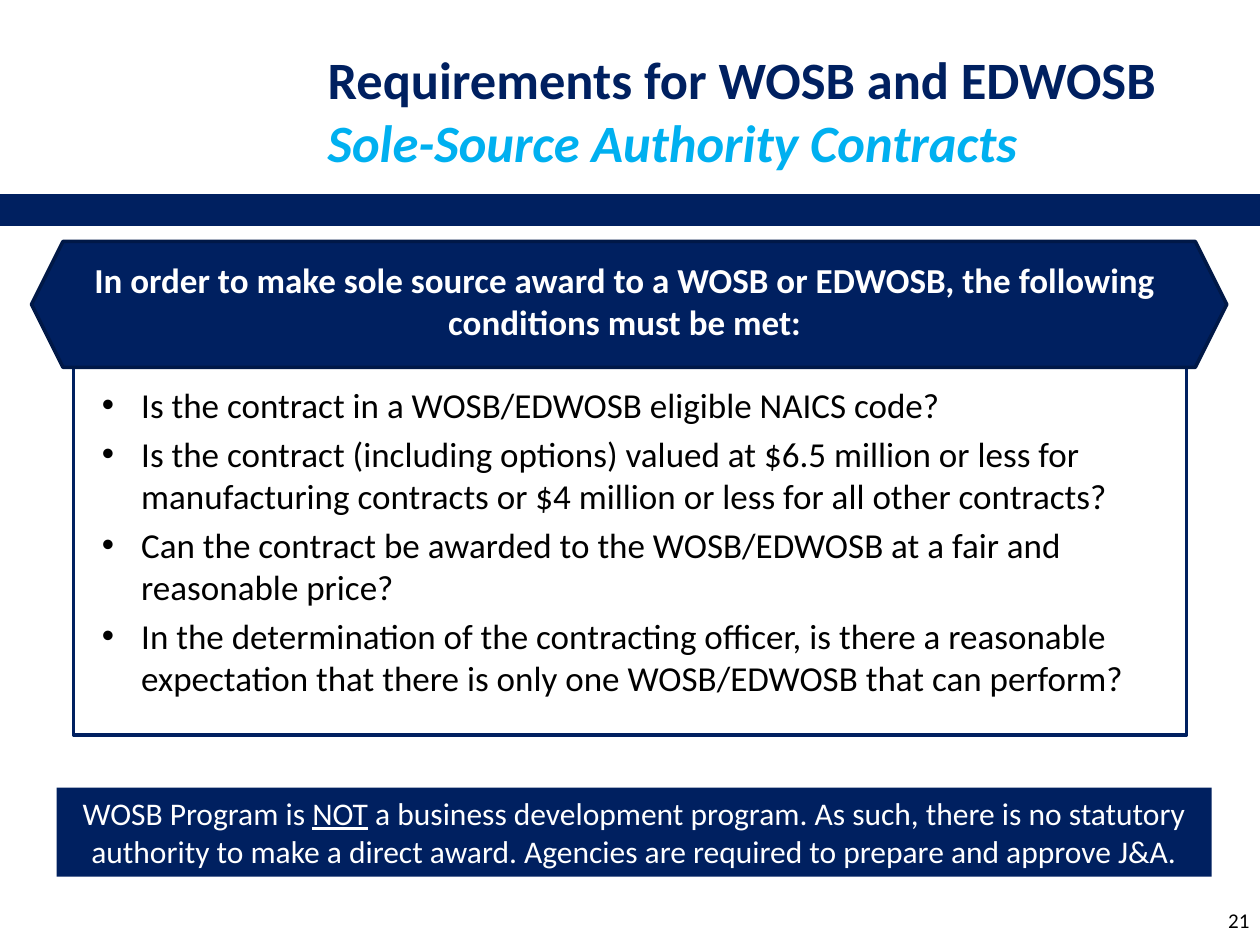
"""Build the slide on sole-source requirements for WOSB and EDWOSB contracts."""
from dataclasses import dataclass
from typing import Optional

from lxml.etree import SubElement
from pptx import Presentation
from pptx.dml.color import RGBColor
from pptx.enum.shapes import MSO_CONNECTOR, MSO_SHAPE
from pptx.enum.text import MSO_ANCHOR, MSO_AUTO_SIZE, PP_ALIGN
from pptx.oxml.ns import qn
from pptx.util import Pt

NAVY = RGBColor(0x00, 0x20, 0x60)
DARK_NAVY = RGBColor(0x00, 0x18, 0x47)
SKY = RGBColor(0x00, 0xB0, 0xF0)
WHITE = RGBColor(0xFF, 0xFF, 0xFF)
BLACK = RGBColor(0x00, 0x00, 0x00)
FONT = "Calibri"

CONDITIONS = (
    "Is the contract in a WOSB/EDWOSB eligible NAICS code?",
    "Is the contract (including options) valued at $6.5 million or less for "
    "manufacturing contracts or $4 million or less for all other contracts?",
    "Can the contract be awarded to the WOSB/EDWOSB at a fair and reasonable price?",
    "In the determination of the contracting officer, is there a reasonable "
    "expectation that there is only one WOSB/EDWOSB that can perform?",
)


@dataclass(frozen=True)
class Box:
    left: float
    top: float
    width: float
    height: float

    def lengths(self) -> tuple:
        return tuple(Pt(value) for value in (self.left, self.top, self.width, self.height))


@dataclass(frozen=True)
class Label:
    box: Box
    runs: tuple
    size: float
    color: RGBColor
    align: PP_ALIGN = PP_ALIGN.CENTER
    anchor: MSO_ANCHOR = MSO_ANCHOR.TOP
    bold: bool = False
    fill: Optional[RGBColor] = None


TITLE_BOX = Box(180, 18, 522, 90)
CONDITIONS_BOX = Box(42, 186, 636, 234)
BANNER_BOX = Box(18, 138, 683, 72)
LABELS = (
    Label(Box(553, 511, 168, 29), ("21",), 12, BLACK, PP_ALIGN.RIGHT, MSO_ANCHOR.MIDDLE),
    Label(Box(30, 144, 654, 56),
          ("In order to make sole source award to a WOSB or EDWOSB, "
           "the following conditions must be met:",), 20, WHITE, bold=True),
    Label(Box(32.4, 450, 660, 51),
          ("WOSB Program is ", "NOT",
           " a business development program. As such, there is no statutory authority "
           "to make a direct award. Agencies are required to prepare and approve J&A."),
          18, WHITE, fill=NAVY),
)


def set_font(font, size: float, color: RGBColor, bold: bool = False) -> None:
    font.name, font.size, font.bold = FONT, Pt(size), bold
    font.color.rgb = color


def place(shape, box: Box) -> None:
    shape.left, shape.top, shape.width, shape.height = box.lengths()


def paint(shape, fill: RGBColor, line: RGBColor) -> None:
    shape.fill.solid()
    shape.fill.fore_color.rgb = fill
    shape.line.color.rgb = line
    shape.line.width = Pt(2)


def draw_rule(slide) -> None:
    rule = slide.shapes.add_connector(MSO_CONNECTOR.STRAIGHT, Pt(0), Pt(120), Pt(720), Pt(120))
    rule.line.color.rgb = NAVY
    rule.line.width = Pt(18)
    SubElement(rule._element.spPr, qn("a:effectLst"))


def fill_title(title) -> None:
    place(title, TITLE_BOX)
    frame = title.text_frame
    frame.auto_size = MSO_AUTO_SIZE.NONE
    frame.vertical_anchor = MSO_ANCHOR.MIDDLE
    paragraph = frame.paragraphs[0]
    paragraph.alignment = PP_ALIGN.LEFT
    set_font(paragraph.font, 30, NAVY, bold=True)
    paragraph.add_run().text = "Requirements for WOSB and EDWOSB"
    paragraph.add_line_break()
    subtitle = paragraph.add_run()
    subtitle.text = "Sole-Source Authority Contracts"
    subtitle.font.italic = True
    subtitle.font.color.rgb = SKY


def fill_conditions(body) -> None:
    place(body, CONDITIONS_BOX)
    paint(body, WHITE, NAVY)
    frame = body.text_frame
    frame.auto_size = MSO_AUTO_SIZE.NONE
    frame.margin_top = Pt(33)
    frame.text = "\n".join(CONDITIONS)
    for index, paragraph in enumerate(frame.paragraphs):
        properties = paragraph._p.get_or_add_pPr()
        properties.set("marL", str(Pt(31.5)))
        properties.set("indent", str(Pt(-22.5)))
        paragraph.space_before = Pt(4 if index else 0)
        set_font(paragraph.font, 20, BLACK)


def draw_banner(slide) -> None:
    banner = slide.shapes.add_shape(MSO_SHAPE.HEXAGON, *BANNER_BOX.lengths())
    banner.adjustments[0] = 0.25
    banner.shadow.inherit = False
    paint(banner, NAVY, DARK_NAVY)


def draw_label(slide, label: Label) -> None:
    shape = slide.shapes.add_textbox(*label.box.lengths())
    if label.fill is not None:
        shape.fill.solid()
        shape.fill.fore_color.rgb = label.fill
    frame = shape.text_frame
    frame.word_wrap = True
    frame.vertical_anchor = label.anchor
    paragraph = frame.paragraphs[0]
    paragraph.alignment = label.align
    set_font(paragraph.font, label.size, label.color, label.bold)
    for text in label.runs:
        run = paragraph.add_run()
        run.text = text
        if text == "NOT":
            run.font.underline = True


def main() -> None:
    presentation = Presentation()
    presentation.slide_width, presentation.slide_height = Pt(720), Pt(540)
    slide = presentation.slides.add_slide(presentation.slide_layouts[1])
    draw_rule(slide)
    fill_title(slide.shapes.title)
    fill_conditions(slide.placeholders[1])
    draw_banner(slide)
    for label in LABELS:
        draw_label(slide, label)
    presentation.save("out.pptx")


if __name__ == "__main__":
    main()
